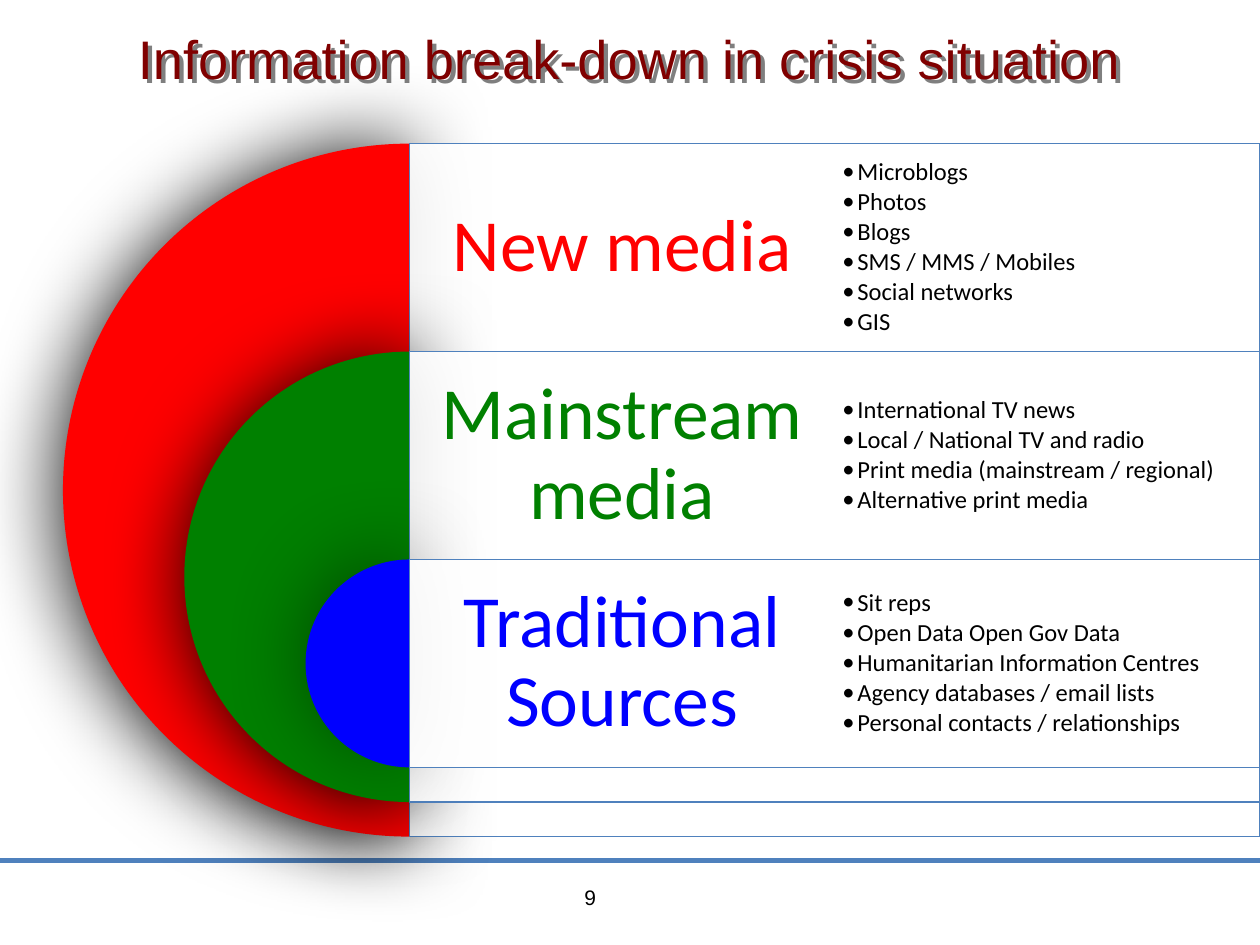
from lxml import etree
from pptx import Presentation, util as u
from pptx.dml import color
from pptx.enum import shapes, text
from pptx.oxml import ns

COLORS = {"title": "800000", "red": "FF0000", "green": "008000", "blue": "0000FF",
          "line": "4F81BD", "black": "000000", "white": "FFFFFF"}
W, H = 10, 7.5
LEFT, TOP, COL, ROW = 0.325, 0.152, 0.3375, 0.22

RINGS = [
    ("New media", "red", ROW / 0.3, (100, 1.8, 90),
     ["Microblogs", "Photos", "Blogs", "SMS / MMS / Mobiles", "Social networks", "GIS"]),
    ("Mainstream media", "green", ROW * 0.65 / 0.3, (100, 3, 45),
     ["International TV news", "Local / National TV and radio",
      "Print media (mainstream / regional)", "Alternative print media"]),
    ("Traditional Sources", "blue", ROW, (43, 4, 270),
     ["Sit reps", "Open Data Open Gov Data", "Humanitarian Information Centres",
      "Agency databases / email lists", "Personal contacts / relationships"]),
]


def rgb(name):
    return color.RGBColor.from_string(COLORS[name])


def sub(parent, tag, **attrs):
    return etree.SubElement(parent, ns.qn(tag), {k: str(v) for k, v in attrs.items()})


def add_shadow(sp, alpha, blur, dist, angle):
    effects = sub(sp._element.spPr, "a:effectLst")
    shadow = sub(effects, "a:outerShdw", blurRad=u.Pt(blur), dist=u.Pt(dist),
                 dir=angle * 60000, algn="ctr", rotWithShape=0)
    clr = sub(shadow, "a:srgbClr", val=COLORS["black"])
    sub(clr, "a:alpha", val=alpha * 1000)


class Slide:
    def __init__(self, prs):
        self.s = prs.slides.add_slide(prs.slide_layouts[6])

    def at(self, x, y, w, h):
        return [u.Inches(v) for v in (x * W, y * H, w * W, h * H)]

    def text(self, box, lines, size, font, name, inset, middle=True, center=False,
             bullets=False, spacing=1.0, after=0):
        sp = self.s.shapes.add_textbox(*self.at(*box))
        tf = sp.text_frame
        tf.word_wrap = True
        tf.vertical_anchor = text.MSO_ANCHOR.MIDDLE if middle else text.MSO_ANCHOR.TOP
        tf.margin_left = tf.margin_right = u.Inches(inset[0])
        tf.margin_top = tf.margin_bottom = u.Inches(inset[1])
        for i, line in enumerate(lines):
            p = tf.add_paragraph() if i else tf.paragraphs[0]
            p.alignment = text.PP_ALIGN.CENTER if center else text.PP_ALIGN.LEFT
            p.line_spacing = spacing
            p.space_after = u.Pt(after)
            if bullets:
                ppr = p._p.get_or_add_pPr()
                ppr.set("marL", str(u.Inches(0.12)))
                ppr.set("indent", str(u.Inches(-0.12)))
                sub(ppr, "a:buFont", typeface=font)
                sub(ppr, "a:buChar", char="•")
            r = p.add_run()
            r.text = line
            r.font.size = u.Pt(size)
            r.font.name = font
            r.font.color.rgb = rgb(name)
        return sp

    def title(self, line):
        sp = self.text((0.049, 0.021, 0.9, 0.148), [line], 31, "Arial", "title",
                       (0.07, 0.04), middle=False, center=True)
        add_shadow(sp, 50, 0, 3.5, 45)

    def half_disc(self, y, size, name, shadow):
        width = size * H / W
        sp = self.s.shapes.add_shape(shapes.MSO_SHAPE.PIE,
                                     *self.at(LEFT - width / 2, y, width, size))
        sp.adjustments[0], sp.adjustments[1] = 54, 162
        sp.fill.solid()
        sp.fill.fore_color.rgb = rgb(name)
        sp.line.fill.background()
        alpha, dist, angle = shadow
        add_shadow(sp, alpha, 50, dist, angle)

    def panel(self, y, height):
        sp = self.s.shapes.add_shape(shapes.MSO_SHAPE.RECTANGLE,
                                     *self.at(LEFT, y, 2 * COL, height))
        sp.shadow.inherit = False
        sp.fill.solid()
        sp.fill.fore_color.rgb = rgb("white")
        clr = sp._element.spPr.find(ns.qn("a:solidFill"))[0]
        sub(clr, "a:alpha", val=90000)
        sp.line.color.rgb = rgb("line")
        sp.line.width = u.Pt(0.75)

    def rule(self, y):
        x, top, w, _ = self.at(0, y, 1, 0)
        line = self.s.shapes.add_connector(shapes.MSO_CONNECTOR.STRAIGHT, x, top, w, top)
        line.line.color.rgb = rgb("line")
        line.line.width = u.Pt(3)
        sub(line._element.spPr, "a:effectLst")


def main():
    prs = Presentation()
    prs.slide_width, prs.slide_height = u.Inches(W), u.Inches(H)
    s = Slide(prs)
    s.rule(0.911)
    s.text((0.454, 0.929, 0.055, 0.048), ["9"], 12, "Arial", "black", (0.1, 0.05), middle=False)
    s.title("Information break-down in crisis situation")
    for i, (label, name, size, shadow, _) in enumerate(RINGS):
        y = TOP + i * ROW
        s.half_disc(y, size, name, shadow)
        s.panel(y, size)
        s.text((LEFT, y, COL, ROW), [label], 42, "Calibri", name, (0.17, 0.17),
               center=True, spacing=0.9, after=14.7)
    for i, ring in enumerate(RINGS):
        s.text((LEFT + COL, TOP + i * ROW, COL, ROW), ring[-1], 14, "Calibri", "black",
               (0.06, 0.06), bullets=True, spacing=0.9, after=2.1)
    prs.save("out.pptx")


if __name__ == "__main__":
    main()
